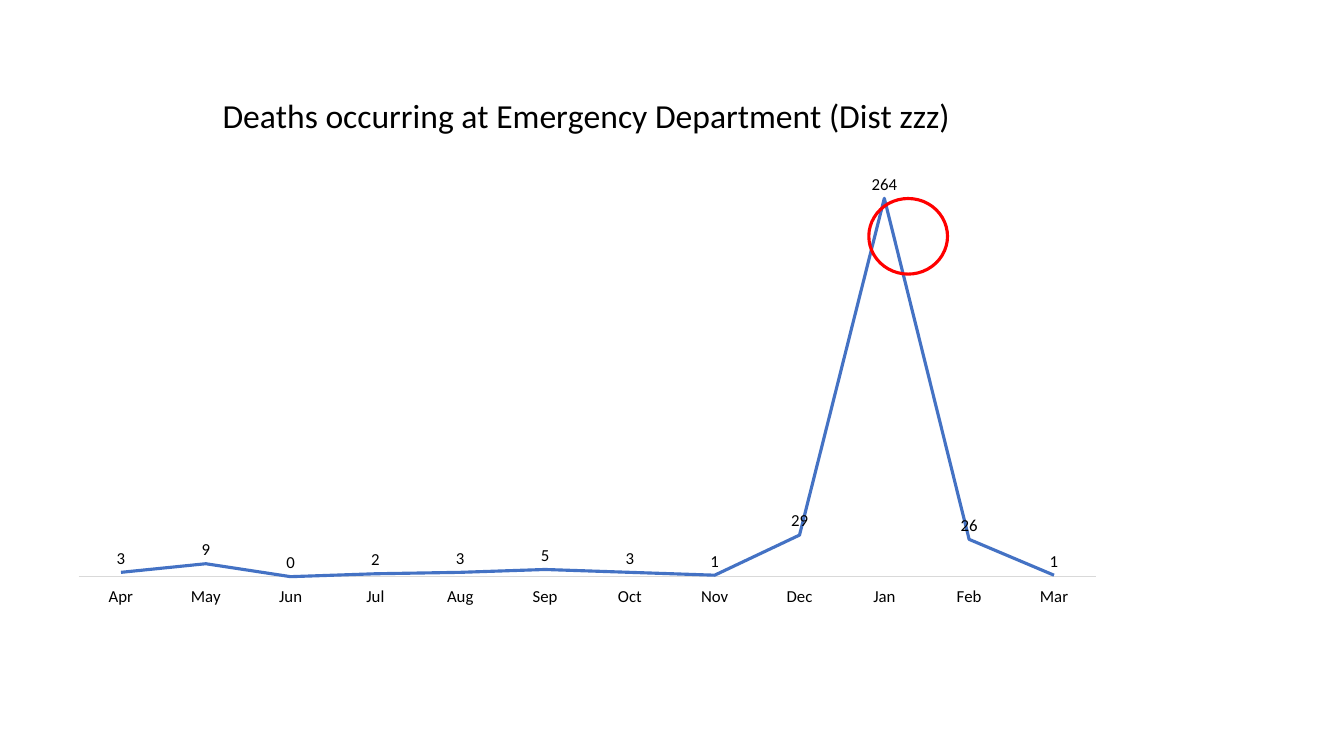
from dataclasses import dataclass

from lxml import etree
from pptx import Presentation
from pptx.chart.chart import Chart
from pptx.chart.data import CategoryChartData
from pptx.dml.color import RGBColor
from pptx.enum.chart import XL_CHART_TYPE as ChartType
from pptx.enum.chart import XL_LABEL_POSITION as LabelPos
from pptx.enum.chart import XL_TICK_LABEL_POSITION as TickLabelPos
from pptx.enum.chart import XL_TICK_MARK as TickMark
from pptx.enum.shapes import MSO_SHAPE as Shape
from pptx.oxml.ns import qn
from pptx.slide import Slide
from pptx.util import Pt

FONT = "Calibri"
BLACK, BLUE, RED, GREY = "000000", "4472C4", "FF0000", "D9D9D9"
TITLE = "Deaths occurring at Emergency Department (Dist zzz)"
DEATHS = {
    "Apr": 3, "May": 9, "Jun": 0, "Jul": 2, "Aug": 3, "Sep": 5,
    "Oct": 3, "Nov": 1, "Dec": 29, "Jan": 264, "Feb": 26, "Mar": 1,
}


@dataclass
class Box:
    """A place on the slide, in points."""
    left: float
    top: float
    width: float
    height: float

    def lengths(self) -> tuple[Pt, Pt, Pt, Pt]:
        return Pt(self.left), Pt(self.top), Pt(self.width), Pt(self.height)


CHART_BOX = Box(41, 50.4, 757.4, 388.8)
PEAK_RING = Box(620.6, 141.8, 56.2, 54)


def color(value: str) -> RGBColor:
    return RGBColor.from_string(value)


def set_font(font, size: float) -> None:
    font.name, font.size, font.bold = FONT, Pt(size), False
    font.color.rgb = color(BLACK)


def set_line(line, value: str, width: float) -> None:
    line.color.rgb = color(value)
    line.width = Pt(width)


def set_layout(parent, index: int, **values: str | float) -> None:
    """Fix the place of a chart part, as fractions of the chart."""
    for old in parent.findall(qn("c:layout")):
        parent.remove(old)
    layout = etree.Element(qn("c:layout"))
    manual = etree.SubElement(layout, qn("c:manualLayout"))
    for name, value in values.items():
        etree.SubElement(manual, qn(f"c:{name}")).set("val", str(value))
    parent.insert(index, layout)


def format_title(chart: Chart) -> None:
    chart.has_title = True
    title = chart.chart_title
    r = title.text_frame.paragraphs[0].add_run()
    r.text = TITLE
    set_font(r.font, 24)
    title.include_in_layout = False
    set_layout(title.element, 1, xMode="edge", yMode="edge", x=0.15, y=0.03)


def format_axes(chart: Chart) -> None:
    months = chart.category_axis
    months.major_tick_mark = months.minor_tick_mark = TickMark.NONE
    months.tick_label_position = TickLabelPos.LOW
    months.has_major_gridlines = False
    set_font(months.tick_labels.font, 12)
    set_line(months.format.line, GREY, 0.75)

    values = chart.value_axis
    values.minimum_scale, values.maximum_scale = 0, 300
    values.has_major_gridlines = False
    values.visible = False


def add_deaths_chart(s: Slide, box: Box) -> None:
    data = CategoryChartData()
    data.categories = list(DEATHS)
    data.add_series("Series 1", list(DEATHS.values()))
    chart = s.shapes.add_chart(ChartType.LINE, *box.lengths(), data).chart
    chart.has_legend = False
    set_font(chart.font, 12)
    format_title(chart)
    format_axes(chart)

    plot = chart.plots[0]
    plot.vary_by_categories = False
    series = plot.series[0]
    series.smooth = False
    set_line(series.format.line, BLUE, 2.25)
    labels = series.data_labels
    labels.show_value = True
    labels.position = LabelPos.ABOVE
    set_font(labels.font, 12)

    plot_area = chart.element.find(f".//{qn('c:plotArea')}")
    set_layout(plot_area, 0, layoutTarget="inner", xMode="edge", yMode="edge",
               x=0.02, y=0.14, w=0.96, h=0.79)


def add_ring(s: Slide, box: Box) -> None:
    ring = s.shapes.add_shape(Shape.OVAL, *box.lengths())
    ring.shadow.inherit = False
    ring.fill.background()
    set_line(ring.line, RED, 2.25)


def main() -> None:
    prs = Presentation()
    prs.slide_width, prs.slide_height = Pt(960), Pt(540)
    s = prs.slides.add_slide(prs.slide_layouts[6])

    # Line chart of deaths by month
    add_deaths_chart(s, CHART_BOX)

    # Ring near the January peak
    add_ring(s, PEAK_RING)

    prs.save("out.pptx")


if __name__ == "__main__":
    main()
